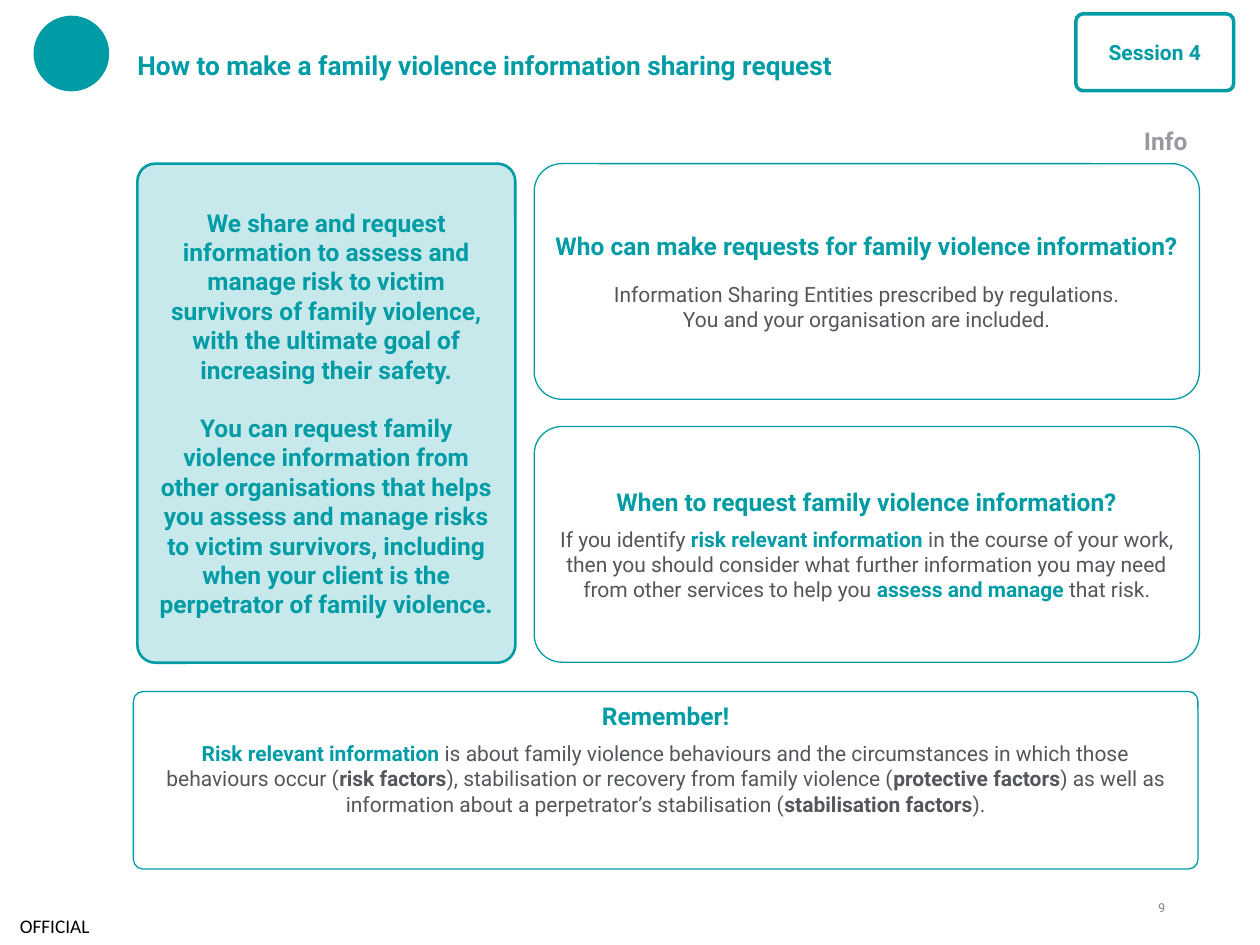
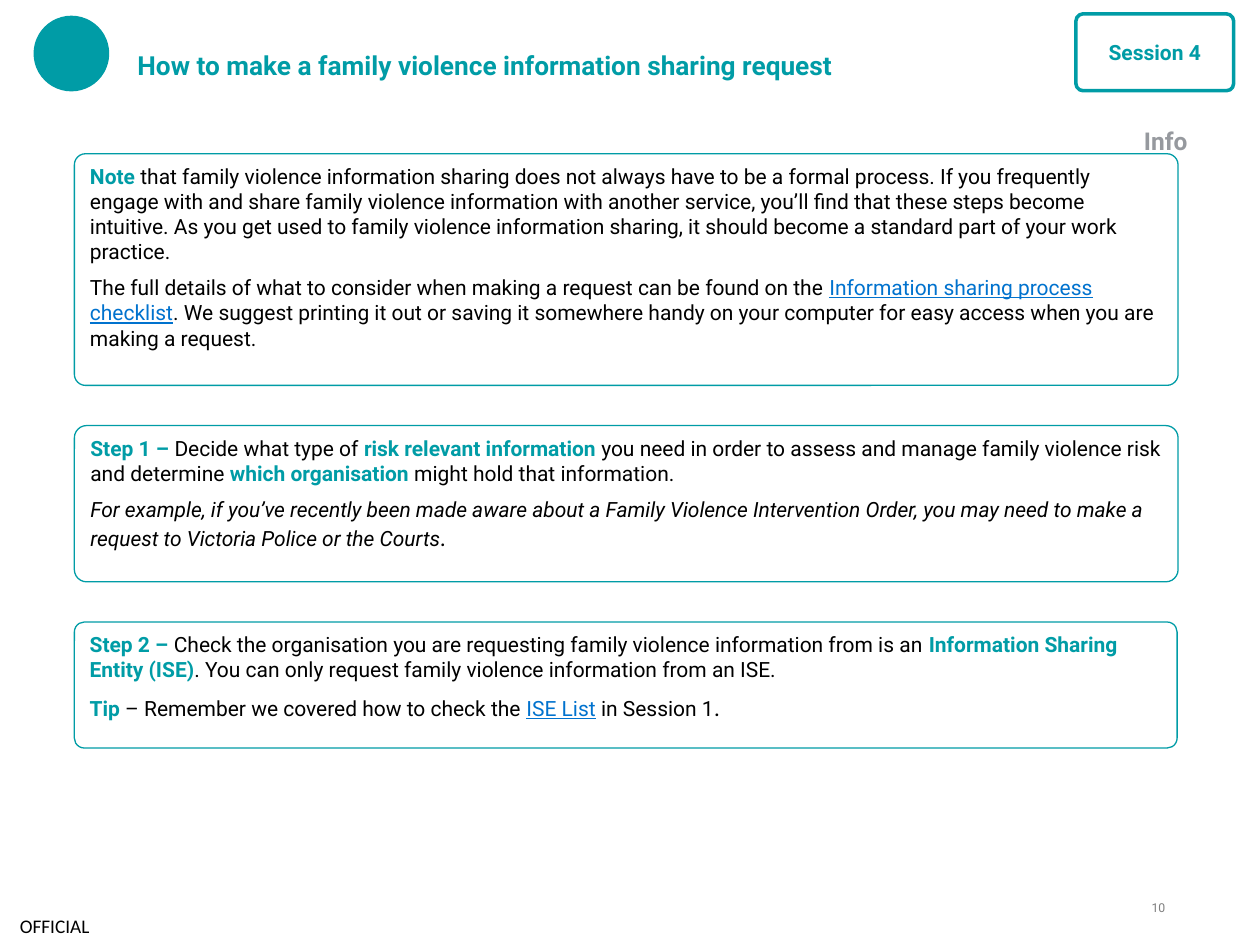
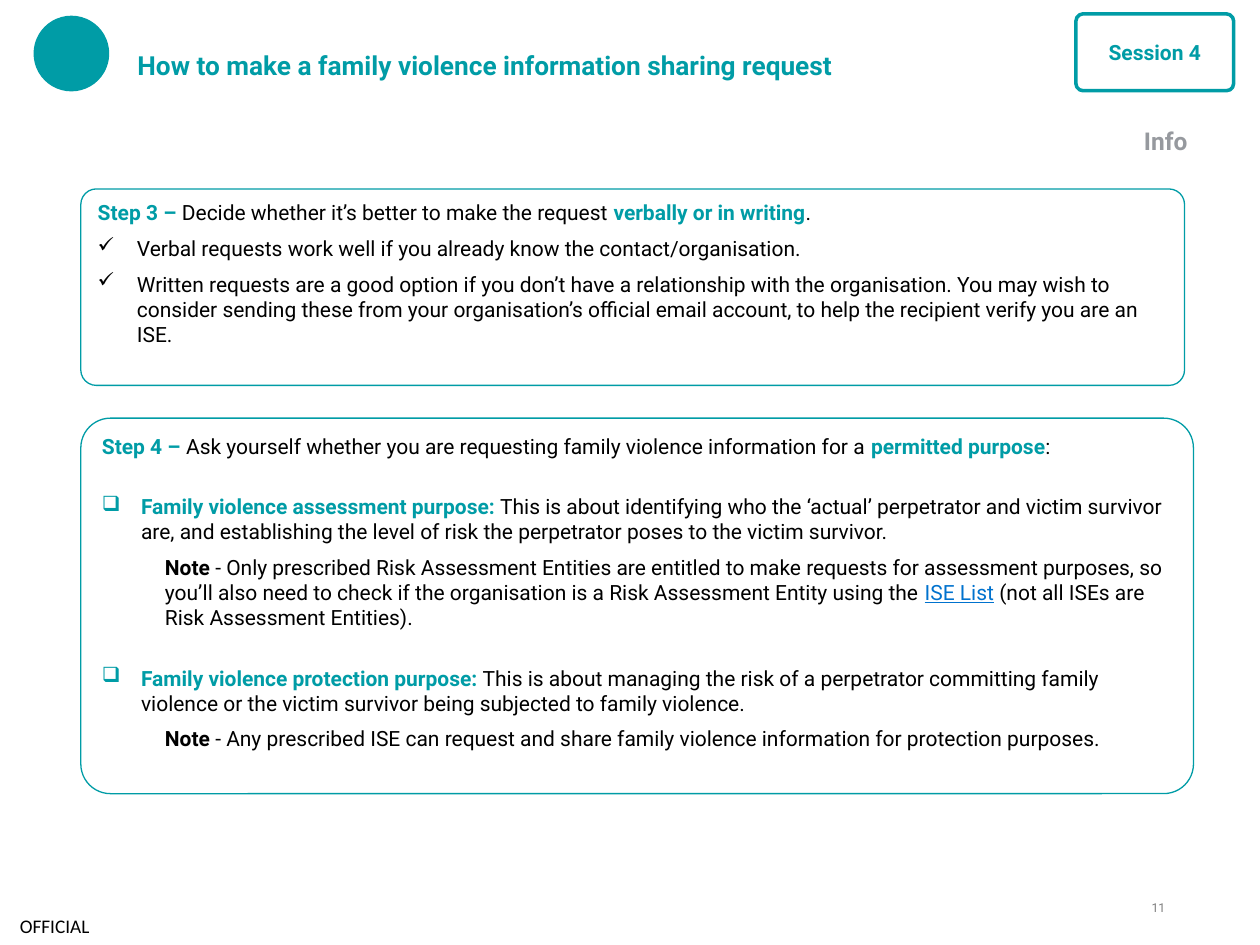
from dataclasses import dataclass

from lxml.etree import SubElement
from pptx import Presentation
from pptx.dml.color import RGBColor
from pptx.enum.shapes import MSO_SHAPE
from pptx.enum.text import MSO_ANCHOR, MSO_AUTO_SIZE, PP_ALIGN
from pptx.oxml.ns import qn
from pptx.util import Cm, Pt


@dataclass(frozen=True)
class Theme:
    font: str = "Roboto"
    footer_font: str = "Calibri"
    teal: str = "009CA6"
    grey: str = "53565A"
    label_grey: str = "96999E"
    number_grey: str = "7F7F7F"
    black: str = "000000"
    white: str = "FFFFFF"
    link: str = "0072CE"
    title: int = 15
    heading: int = 14
    body: int = 12
    footer: int = 11
    number: int = 7
    gap: int = 6
    wide_gap: int = 20
    hang: float = 0.79
    note_indent: float = 1.27


T = Theme()

STYLES = {
    "title": dict(size=T.title, color=T.teal, bold=True),
    "heading": dict(size=T.heading, color=T.teal, bold=True),
    "key": dict(color=T.teal, bold=True),
    "grey": dict(color=T.grey),
    "grey_bold": dict(color=T.grey, bold=True),
    "text": dict(color=T.black),
    "bold": dict(color=T.black, bold=True),
    "italic": dict(color=T.black, italic=True),
    "stop": dict(color=T.black, size=T.heading),
    "italic_stop": dict(color=T.black, size=T.heading, italic=True),
    "link": dict(color=T.link, underline=True),
    "label": dict(size=T.heading, color=T.label_grey, bold=True),
    "footer": dict(size=T.footer, color=T.black, name=T.footer_font),
    "number": dict(size=T.number, color=T.number_grey),
}


def para(*runs, **fmt):
    return runs, fmt


def apply(obj, values):
    for key, value in values.items():
        setattr(obj, key, value)


class Deck:
    def __init__(self, theme):
        self.theme = theme
        self.prs = Presentation()
        apply(self.prs, dict(slide_width=Cm(25.4), slide_height=Cm(19.05)))
        self.s = None

    def slide(self, title, session, label, number):
        self.s = self.prs.slides.add_slide(self.prs.slide_layouts[5])
        sp = self.s.shapes.title
        apply(sp, dict(left=Cm(2.77), top=Cm(0.48), width=Cm(17.42), height=Cm(1.65)))
        self.fill_text(sp.text_frame, [para((title, "title"))],
                       anchor=MSO_ANCHOR.MIDDLE, inset=(0, 0))
        self.text(0.4, 18.26, 2.2, 0.79, ("OFFICIAL", "footer"),
                  anchor=MSO_ANCHOR.MIDDLE, inset=(0, 0))
        self.text(22.81, 2.41, 2.4, 0.86, (label, "label"))
        self.shape(MSO_SHAPE.OVAL, 0.69, 0.33, 1.5, 1.5, fill=self.theme.teal)
        self.box(21.69, 0.28, 3.18, 1.55, [para((session, "key"))], 0.094,
                 fill=self.theme.white, line=2, align=PP_ALIGN.CENTER,
                 anchor=MSO_ANCHOR.MIDDLE, inset=(0.51, 0.13))
        self.text(22.63, 18.14, 0.86, 0.51, (str(number), "number"),
                  align=PP_ALIGN.RIGHT, inset=(0, 0))

    def shape(self, kind, x, y, w, h, fill=None, alpha=None, line=0.75):
        sp = self.s.shapes.add_shape(kind, Cm(x), Cm(y), Cm(w), Cm(h))
        sp.shadow.inherit = False
        sp.line.color.rgb = RGBColor.from_string(self.theme.teal)
        sp.line.width = Pt(line)
        if fill:
            sp.fill.solid()
            sp.fill.fore_color.rgb = RGBColor.from_string(fill)
        else:
            sp.fill.background()
        if alpha:
            clr = sp._element.spPr.find(qn("a:solidFill"))[0]
            SubElement(clr, qn("a:alpha")).set("val", str(alpha * 1000))
        return sp

    def box(self, x, y, w, h, paras, corner, fill=None, alpha=None, line=0.75, **text):
        sp = self.shape(MSO_SHAPE.ROUNDED_RECTANGLE, x, y, w, h, fill, alpha, line)
        sp.adjustments[0] = corner
        self.fill_text(sp.text_frame, paras, **text)

    def stack(self, x, y, gap, boxes):
        for w, h, corner, paras in boxes:
            self.box(x, y, w, h, paras, corner)
            y += h + gap

    def text(self, x, y, w, h, run, **text):
        sp = self.s.shapes.add_textbox(Cm(x), Cm(y), Cm(w), Cm(h))
        self.fill_text(sp.text_frame, [para(run)], **text)

    def fill_text(self, tf, paras, align=PP_ALIGN.LEFT, anchor=MSO_ANCHOR.TOP,
                  inset=(0.25, 0.13)):
        side, edge = map(Cm, inset)
        apply(tf, dict(word_wrap=True, auto_size=MSO_AUTO_SIZE.NONE,
                       vertical_anchor=anchor, margin_left=side, margin_right=side,
                       margin_top=edge, margin_bottom=edge))
        for i, (runs, fmt) in enumerate(paras):
            p = tf.add_paragraph() if i else tf.paragraphs[0]
            self.paragraph(p, runs, align, **fmt)

    def paragraph(self, p, runs, align, bullet=None, indent=0, before=0, after=T.gap):
        pPr = p._p.get_or_add_pPr()
        if bullet:
            pPr.set("marL", str(Cm(self.theme.hang)))
            pPr.set("indent", str(-Cm(self.theme.hang)))
            SubElement(pPr, qn("a:buChar")).set("char", bullet)
        elif indent:
            pPr.set("marL", str(Cm(indent)))
            pPr.set("indent", "0")
        apply(p, dict(alignment=align, space_before=Pt(before), space_after=Pt(after)))
        for text, style in runs:
            if text == "\n":
                p.add_line_break()
            else:
                self.run(p, text, style)

    def run(self, p, text, style):
        values = dict(name=self.theme.font, size=self.theme.body, bold=False)
        values.update(STYLES[style])
        color = values.pop("color")
        values["size"] = Pt(values["size"])
        r = p.add_run()
        r.text = text
        apply(r.font, values)
        r.font.color.rgb = RGBColor.from_string(color)


def overview(d):
    centre = dict(align=PP_ALIGN.CENTER)
    middle = dict(centre, anchor=MSO_ANCHOR.MIDDLE)
    d.box(2.77, 3.3, 7.62, 10.06, [
        para(("We share and request information to assess and manage risk to victim "
              "survivors of family violence, with the ultimate goal of increasing "
              "their safety.", "heading"), after=0),
        para(("You can request family violence information from other organisations "
              "that helps you assess and manage risks to victim survivors, including "
              "when your client is the perpetrator of family violence.", "heading"),
             before=16.5, after=0),
    ], 0.047, fill=T.teal, alpha=22, line=1.5, **middle)
    questions = [
        [para(("Who can make requests for family violence information?", "heading")),
         para(("Information Sharing Entities prescribed by regulations.", "grey"),
              ("\n", "grey"),
              ("You and your organisation are included.", "grey"), before=6)],
        [para(("When to request family violence information?", "heading")),
         para(("If you identify ", "grey"), ("risk relevant information", "key"),
              (" in the course of your work, then you should consider what further "
               "information you may need from other services to help you ", "grey"),
              ("assess and manage ", "key"), ("that risk.", "grey"))],
    ]
    for i, paras in enumerate(questions):
        d.box(10.77, 3.3 + i * 5.3, 13.41, 4.75, paras, 0.117,
              inset=(0.05, 0.13), **middle)
    d.box(2.69, 13.94, 21.46, 3.58, [
        para(("Remember!", "heading")),
        para(("Risk relevant information ", "key"),
             ("is about family violence behaviours and the circumstances in which "
              "those behaviours occur (", "grey"),
             ("risk factors", "grey_bold"),
             ("), stabilisation or recovery from family violence (", "grey"),
             ("protective factors", "grey_bold"),
             (") as well as information about a perpetrator’s stabilisation (", "grey"),
             ("stabilisation factors", "grey_bold"), (").", "grey")),
    ], 0.054, **centre)


def first_steps(d):
    note = [
        para(("Note ", "key"),
             ("that family violence information sharing does not always have to be a "
              "formal process. If you frequently engage with and share family violence "
              "information with another service, you’ll find that these steps become "
              "intuitive. As you get used to family violence information sharing, it "
              "should become a standard part of your work practice.", "text")),
        para(("The full details of what to consider when making a request can be found "
              "on the ", "text"),
             ("Information sharing process checklist", "link"),
             (". We suggest printing it out or saving it somewhere handy on your "
              "computer for easy access when you are making a request.", "text")),
    ]
    step_1 = [
        para(("Step 1 – ", "key"), ("Decide what type of ", "text"),
             ("risk relevant information", "key"),
             (" you need in order to assess and manage family violence risk and "
              "determine ", "text"),
             ("which organisation ", "key"), ("might hold that information.", "text")),
        para(("For example, if you’ve recently been made aware about a Family Violence "
              "Intervention Order, you may need to make a request to Victoria Police "
              "or the Courts", "italic"), (".", "italic_stop")),
    ]
    step_2 = [
        para(("Step 2 – ", "key"),
             ("Check the organisation you are requesting family violence information "
              "from is an", "text"),
             (" Information Sharing Entity (ISE)", "key"),
             (". You can only request family violence information from an ISE.", "text")),
        para(("Tip", "key"), (" – Remember we covered how to check the ", "text"),
             ("ISE List", "link"), (" in Session 1", "text"), (".", "stop")),
    ]
    d.stack(1.5, 3.1, 0.81, [(22.25, 4.67, 0.048, note),
                             (22.25, 3.15, 0.079, step_1),
                             (22.23, 2.54, 0.079, step_2)])


def later_steps(d):
    step_3 = [
        para(("Step 3 – ", "key"),
             ("Decide whether it’s better to make the request ", "text"),
             ("verbally or in writing", "key"), (".", "text")),
        para(("Verbal requests work well if you already know the contact/organisation.",
              "text"), bullet="✓"),
        para(("Written requests are a good option if you don’t have a relationship with "
              "the organisation. You may wish to consider sending these from your "
              "organisation’s official email account, to help the recipient verify you "
              "are an ISE.", "text"), bullet="✓"),
    ]
    step_4 = [
        para(("Step 4 – ", "key"),
             ("Ask yourself whether you are requesting family violence information for "
              "a ", "text"),
             ("permitted purpose", "key"), (":", "text"), after=T.wide_gap),
        para(("Family violence assessment purpose:", "key"),
             (" This is about identifying who the ‘actual’ perpetrator and victim "
              "survivor are, and establishing the level of risk the perpetrator poses "
              "to the victim survivor.", "text"), bullet="❑"),
        para(("Note ", "bold"),
             ("- Only prescribed Risk Assessment Entities are entitled to make requests "
              "for assessment purposes, so you’ll also need to check if the "
              "organisation is a Risk Assessment Entity using the ", "text"),
             ("ISE List", "link"),
             (" (not all ISEs are Risk Assessment Entities).", "text"),
             indent=T.note_indent, after=T.wide_gap),
        para(("Family violence protection purpose:", "key"),
             (" This is about managing the risk of a perpetrator committing family "
              "violence or the victim survivor being subjected to family violence.",
              "text"), bullet="❑"),
        para(("Note ", "bold"),
             ("- Any prescribed ISE can request and share family violence information "
              "for protection purposes.", "text"), indent=T.note_indent),
    ]
    d.stack(1.63, 3.81, 0.66, [(22.25, 3.96, 0.079, step_3),
                               (22.43, 7.57, 0.079, step_4)])


def main():
    d = Deck(T)
    for number, build in enumerate((overview, first_steps, later_steps), 9):
        d.slide("How to make a family violence information sharing request",
                "Session 4", "Info", number)
        build(d)
    d.prs.save("out.pptx")


if __name__ == "__main__":
    main()
